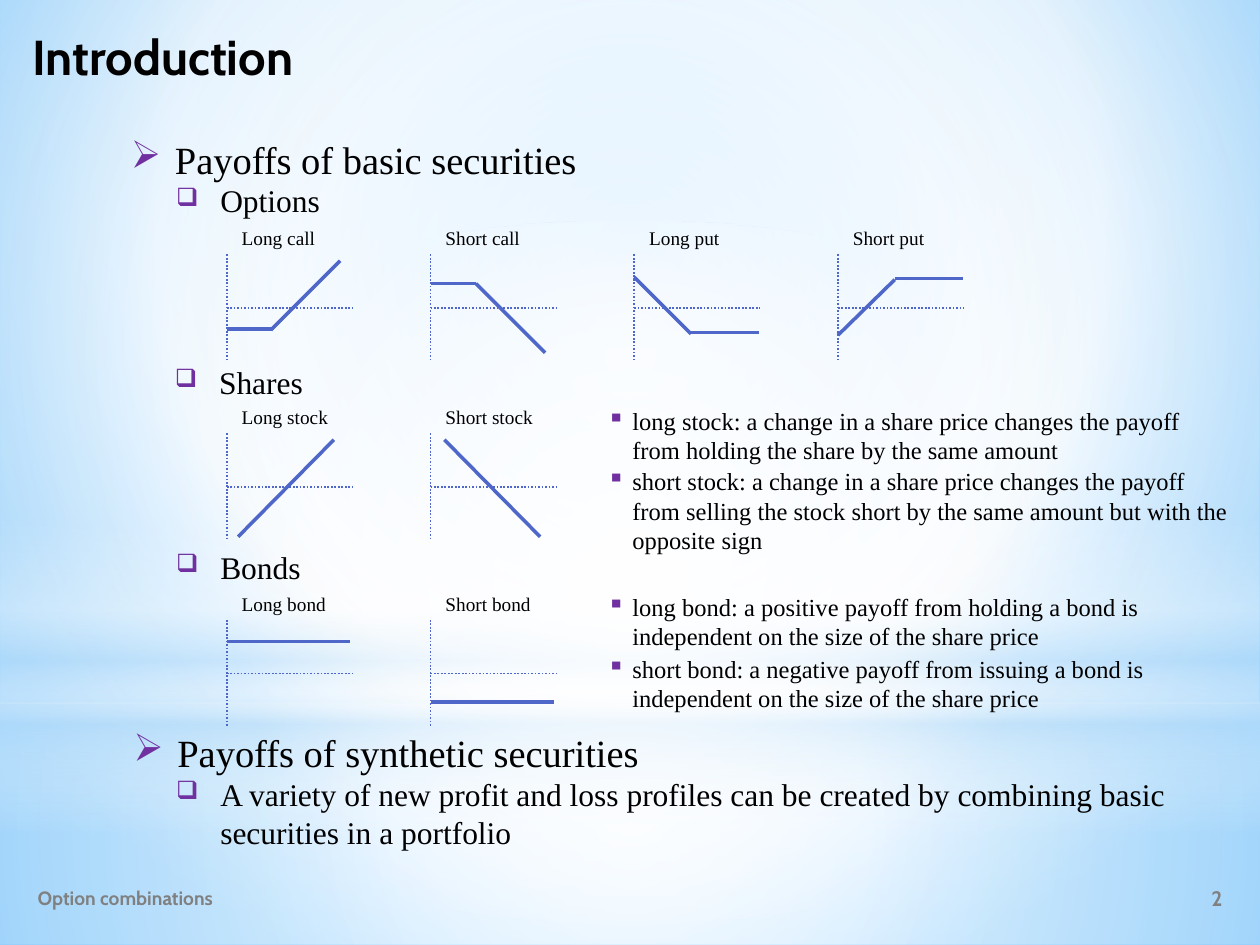
from lxml import etree
from pptx import Presentation
from pptx import util as u
from pptx.dml.color import RGBColor
from pptx.enum import dml, shapes, text
from pptx.oxml.ns import nsdecls, qn

Inches = u.Inches
SERIF, SANS = "Times New Roman", "Cabin"
BLACK, GRAY, PURPLE, BLUE = "000000", "808080", "7030A0", "4E67C8"
color = RGBColor.from_string


def add_text(parent, box, content, size, font=SERIF, ink=BLACK, bullet=None, indent=0, bullet_size=100):
    shape = parent.add_textbox(*[Inches(value) for value in box])
    frame = shape.text_frame
    frame.word_wrap = True
    frame.text = content
    paragraph = frame.paragraphs[0]
    if bullet:
        properties = paragraph._p.get_or_add_pPr()
        properties.set("marL", str(Inches(indent)))
        properties.set("indent", str(-Inches(indent)))
        bullet_color = etree.SubElement(properties, qn("a:buClr"))
        etree.SubElement(bullet_color, qn("a:srgbClr"), val=PURPLE)
        etree.SubElement(properties, qn("a:buSzPct"), val=str(bullet_size * 1000))
        etree.SubElement(properties, qn("a:buChar"), char=bullet)
    run = paragraph.runs[0]
    run.font.size = u.Pt(size)
    run.font.name = font
    run.font.bold = font == SANS
    run.font.color.rgb = color(ink)
    return shape


def add_line(parent, points, width, dotted=False):
    line = parent.add_connector(shapes.MSO_CONNECTOR.STRAIGHT, *[Inches(value) for value in points])
    line.line.color.rgb = color(BLUE)
    line.line.width = u.Pt(width)
    if dotted:
        line.line.dash_style = dml.MSO_LINE.ROUND_DOT
    etree.SubElement(line._element.spPr, qn("a:effectLst"))


presentation = Presentation()
presentation.slide_width, presentation.slide_height = Inches(10), Inches(7.5)
slide = presentation.slides.add_slide(presentation.slide_layouts[6])

# Background and soft light overlays: stops are position, colour, opacity
CENTER = '<a:path path="circle"><a:fillToRect l="50000" t="50000" r="50000" b="50000"/></a:path>'
GLOW = '<a:path path="circle"><a:fillToRect l="20000" t="10000" r="20000" b="60000"/></a:path>'
DOWN = '<a:lin ang="5400000" scaled="0"/>'
RECTANGLE, OVAL = shapes.MSO_SHAPE.RECTANGLE, shapes.MSO_SHAPE.OVAL
layers = [
    (None, None, GLOW, [(0, "9ED5FF", 100), (60, "FFFFFF", 100), (100, "5BB9FF", 100)]),
    (RECTANGLE, (0, 5.58, 10, 1.92), CENTER, [(0, "FFFFFF", 91), (37, "FFFFFF", 76), (100, "B4DCFA", 79)]),
    (RECTANGLE, (0, 0, 10, 5.58), CENTER, [(0, "FFFFFF", 89), (48, "FFFFFF", 62), (100, "B4DCFA", 79)]),
    (RECTANGLE, (0, 4.12, 10, 2.5), DOWN, [(0, "FFFFFF", 0), (29, "FFFFFF", 30), (45, "B4DCFA", 40),
                                           (55, "FFFFFF", 26), (65, "B4DCFA", 60), (100, "FFFFFF", 0)]),
    (OVAL, (0, 1.75, 10, 5.58), CENTER, [(0, "FFFFFF", 100), (56, "FFFFFF", 0)]),
]
for kind, box, direction, stops in layers:
    if kind is None:
        target, element = slide.background, slide._element
    else:
        target = slide.shapes.add_shape(kind, *[Inches(value) for value in box])
        target.shadow.inherit = False
        target.line.fill.background()
        element = target._element
    target.fill.solid()
    target.fill.fore_color.rgb = color("FFFFFF")
    solid = element.find(".//" + qn("a:solidFill"))
    stop_xml = "".join(
        f'<a:gs pos="{position * 1000}"><a:srgbClr val="{tint}"><a:alpha val="{opacity * 1000}"/></a:srgbClr></a:gs>'
        for position, tint, opacity in stops)
    gradient = etree.fromstring(
        f'<a:gradFill {nsdecls("a")} rotWithShape="1"><a:gsLst>{stop_xml}</a:gsLst>{direction}</a:gradFill>')
    solid.getparent().replace(solid, gradient)

# Title and footer
add_text(slide.shapes, (0.16, 0.16, 3.27, 0.71), "Introduction", 28, SANS)
footer = add_text(slide.shapes, (0.2, 6.93, 3.62, 0.39), "Option combinations", 11, SANS, GRAY)
number = add_text(slide.shapes, (7.83, 6.93, 1.97, 0.39), "2", 12, SANS, GRAY)
number.text_frame.paragraphs[0].alignment = text.PP_ALIGN.RIGHT
for shape in (footer, number):
    shape.text_frame.vertical_anchor = text.MSO_ANCHOR.MIDDLE

# Section headings
for box, heading in [((0.94, 1.03, 4.09, 0.47), "Payoffs of basic securities"),
                     ((0.96, 5.74, 4.83, 0.47), "Payoffs of synthetic securities")]:
    add_text(slide.shapes, box, heading, 22, bullet="➢", indent=0.35)

# Second-level points
for box, point in [
    ((1.3, 1.39, 2.13, 0.4), "Options"),
    ((1.29, 2.83, 2.14, 0.4), "Shares"),
    ((1.3, 4.3, 1.4, 0.4), "Bonds"),
    ((1.3, 6.1, 8.5, 0.71),
     "A variety of new profit and loss profiles can be created by combining basic securities in a portfolio"),
]:
    add_text(slide.shapes, box, point, 18, bullet="❑", indent=0.35, bullet_size=80)

# Payoff diagrams: column, axis top, label, payoff segments relative to the axis top
COLUMN_LEFT, COLUMN_STEP = 1.8, 1.617
diagrams = [
    (0, 2.02, "Long call", [(0, 0.59, 0.36, 0.59), (0.35, 0.6, 0.9, 0.05)]),
    (1, 2.02, "Short call", [(0, 0.23, 0.36, 0.23), (0.91, 0.78, 0.36, 0.23)]),
    (2, 2.02, "Long put", [(0.45, 0.62, 0.99, 0.62), (0.45, 0.63, 0, 0.18)]),
    (3, 2.02, "Short put", [(0.45, 0.19, 0.99, 0.19), (0, 0.64, 0.45, 0.2)]),
    (0, 3.44, "Long stock", [(0.09, 0.82, 0.85, 0.05)]),
    (1, 3.44, "Short stock", [(0.87, 0.82, 0.11, 0.05)]),
    (0, 4.92, "Long bond", [(0, 0.17, 0.98, 0.17)]),
    (1, 4.92, "Short bond", [(0, 0.65, 0.98, 0.65)]),
]
for column, top, label, segments in diagrams:
    left = COLUMN_LEFT + column * COLUMN_STEP
    diagram = slide.shapes.add_group_shape().shapes
    add_line(diagram, (left, top, left, top + 0.85), 1, dotted=True)
    add_line(diagram, (left, top + 0.425, left + 1, top + 0.425), 1, dotted=True)
    caption = add_text(diagram, (left + 0.02, top - 0.235, 0.96, 0.25), label, 11)
    caption.text_frame.paragraphs[0].line_spacing = 0.8
    for x1, y1, x2, y2 in segments:
        add_line(diagram, (left + x1, top + y1, left + x2, top + y2), 2)

# Explanations beside the diagrams
for top, height, explanation in [
    (3.17, 0.57, "long stock: a change in a share price changes the payoff from holding the share by the same amount"),
    (3.65, 0.81, "short stock: a change in a share price changes the payoff from selling the stock short "
                 "by the same amount but with the opposite sign"),
    (4.65, 0.57, "long bond: a positive payoff from holding a bond is independent on the size of the share price"),
    (5.14, 0.57, "short bond: a negative payoff from issuing a bond is independent on the size of the share price"),
]:
    add_text(slide.shapes, (4.72, top, 5.16, height), explanation, 14, bullet="▪", indent=0.2)

presentation.save("out.pptx")
